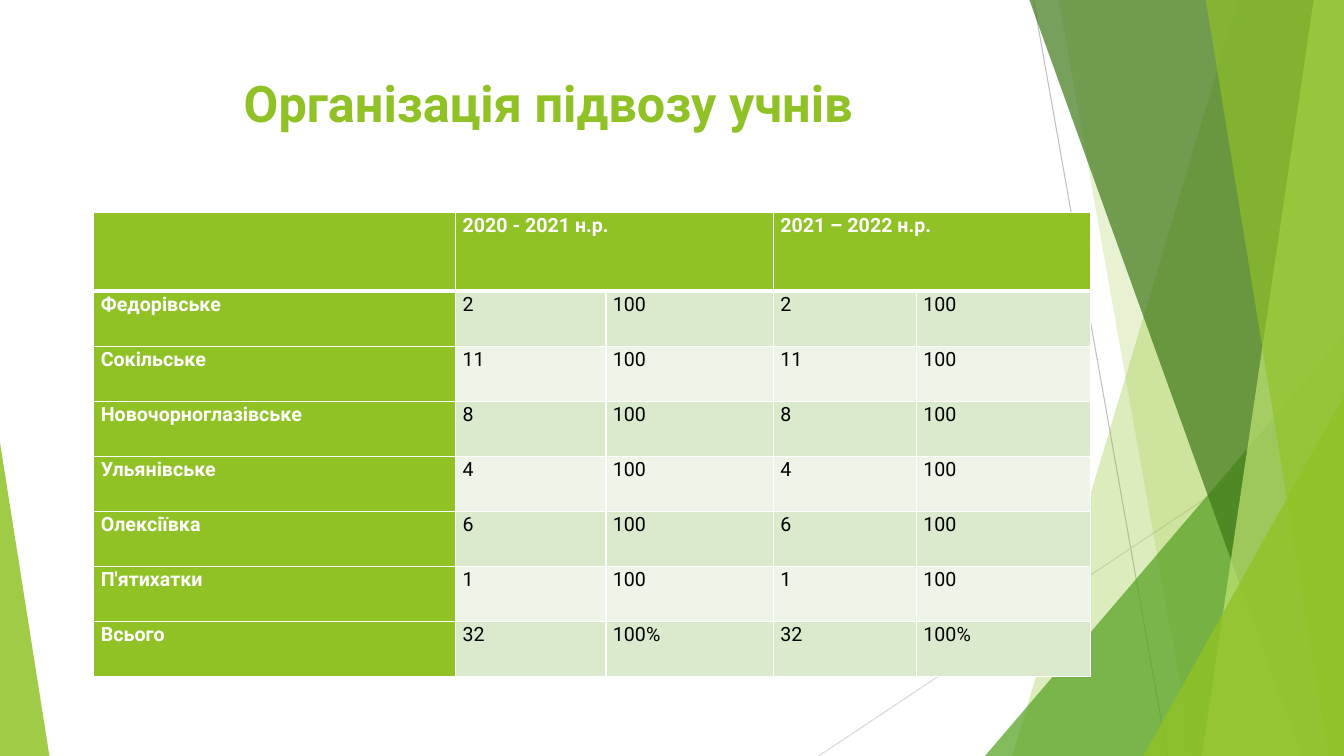
import collections

import lxml.etree
import pptx
import pptx.dml.color
import pptx.enum.shapes
import pptx.enum.text
import pptx.oxml.ns
import pptx.util

COLORS = {
    "lime": "90C226", "green": "54A021", "forest": "3F7819", "pale": "C0E474",
    "gray": "BFBFBF", "silver": "D9D9D9", "white": "FFFFFF", "black": "000000",
    "odd": "DBE9CD", "even": "EEF4E8",
}
FONT = "Roboto"
COLUMNS, ROWS = 13.33, 7.5
Box = collections.namedtuple("Box", "left top width height")
HEADINGS = {1: "2020 - 2021 н.р.", 3: "2021 – 2022 н.р."}
COLUMN_WIDTHS = [3.59, 1.49, 1.66, 1.42, 1.73]
HEADER_HEIGHT = 0.78
SCHOOLS = [
    ("Федорівське", "2", "100"),
    ("Сокільське", "11", "100"),
    ("Новочорноглазівське", "8", "100"),
    ("Ульянівське", "4", "100"),
    ("Олексіївка", "6", "100"),
    ("П'ятихатки", "1", "100"),
    ("Всього", "32", "100%"),
]


def grid(*lengths):
    """Turn grid columns or rows, one inch each, into slide lengths."""
    return [pptx.util.Inches(length) for length in lengths]


def color(name):
    """Return a named colour."""
    return pptx.dml.color.RGBColor.from_string(COLORS[name])


def paint(shape, name, opacity):
    """Fill a shape with a translucent colour, without line or shadow."""
    shape.shadow.inherit = False
    shape.line.fill.background()
    shape.fill.solid()
    shape.fill.fore_color.rgb = color(name)
    tone = shape.fill._xPr.find(".//" + pptx.oxml.ns.qn("a:srgbClr"))
    lxml.etree.SubElement(tone, pptx.oxml.ns.qn("a:alpha"), val=str(opacity * 1000))


def add_ray(page, box, start, end, name):
    """Draw a thin line between two points of the box."""
    points = [box.left + start[0], box.top + start[1], box.left + end[0], box.top + end[1]]
    ray = page.shapes.add_connector(pptx.enum.shapes.MSO_CONNECTOR.STRAIGHT, *grid(*points))
    ray.line.color.rgb = color(name)
    ray.line.width = pptx.util.Pt(0.75)
    lxml.etree.SubElement(ray._element.spPr, pptx.oxml.ns.qn("a:effectLst"))


def add_blade(page, box, top, bottom, name, opacity):
    """Fill the box to the right of a slanted edge."""
    right, floor = box.left + box.width, box.top + box.height
    corners = [(right, box.top), (right, floor), (box.left + bottom, floor)]
    blade = page.shapes.build_freeform(*grid(box.left + top, box.top))
    blade.add_line_segments([grid(*corner) for corner in corners], close=True)
    paint(blade.convert_to_shape(), name, opacity)


def add_wedge(page, box, peak, name, opacity):
    """Fill the box with a triangle whose peak is at a share of its width."""
    wedge = page.shapes.add_shape(
        pptx.enum.shapes.MSO_SHAPE.ISOSCELES_TRIANGLE, *grid(*box))
    wedge.adjustments[0] = peak
    paint(wedge, name, opacity)


def add_corner_wedge(page, box, left, top, name, opacity):
    """Put a triangle in the lower right corner of the box."""
    corner = Box(box.left + left, box.top + top, box.width - left, box.height - top)
    add_wedge(page, corner, 1, name, opacity)


def add_facets(page, box):
    """Draw the layered green facets."""
    add_ray(page, box, (2.13, 0), (3.46, box.height), "gray")
    add_ray(page, box, (box.width, 4.03), (0, box.height), "silver")
    add_blade(page, box, 4.16, 1.92, "lime", 30)
    add_blade(page, box, 2.38, 3.71, "lime", 20)
    add_corner_wedge(page, box, 1.65, 3.33, "green", 72)
    add_blade(page, box, 2.09, 4.79, "forest", 70)
    add_blade(page, box, 4.91, 3.8, "pale", 70)
    add_blade(page, box, 3.84, 5.06, "lime", 65)
    add_corner_wedge(page, box, 3.22, 3.93, "lime", 80)


def style_paragraph(para, size, name, bold):
    """Format the runs of a paragraph."""
    for span in para.runs:
        span.font.name = FONT
        span.font.size = pptx.util.Pt(size)
        span.font.bold = bold
        span.font.color.rgb = color(name)


def add_title(page, box):
    """Write the centred title in its placeholder."""
    title = page.shapes.title
    title.left, title.top, title.width, title.height = grid(*box)
    frame = title.text_frame
    frame.text = "Організація підвозу учнів"
    frame.word_wrap = True
    frame.vertical_anchor = pptx.enum.text.MSO_ANCHOR.TOP
    para = frame.paragraphs[0]
    para.alignment = pptx.enum.text.PP_ALIGN.CENTER
    style_paragraph(para, 36, "lime", True)


def add_borders(cell, bottom):
    """Give a cell white borders, with the bottom one in its own width."""
    properties = cell._tc.get_or_add_tcPr()
    widths = {"a:lnL": 1, "a:lnR": 1, "a:lnT": 1, "a:lnB": bottom}
    for position, (tag, width) in enumerate(widths.items()):
        line = lxml.etree.Element(pptx.oxml.ns.qn(tag), w=str(pptx.util.Pt(width)))
        fill = lxml.etree.SubElement(line, pptx.oxml.ns.qn("a:solidFill"))
        lxml.etree.SubElement(fill, pptx.oxml.ns.qn("a:srgbClr"), val=COLORS["white"])
        properties.insert(position, line)


def fill_cell(cell, text, is_heading, background, bottom):
    """Write and format one table cell."""
    cell.margin_left, cell.margin_right, cell.margin_top, cell.margin_bottom = grid(
        0.07, 0.07, 0, 0)
    cell.fill.solid()
    cell.fill.fore_color.rgb = color(background)
    add_borders(cell, bottom)
    cell.text_frame.text = text
    para = cell.text_frame.paragraphs[0]
    para.line_spacing = 1.07
    style_paragraph(para, 14, "white" if is_heading else "black", is_heading)


def add_transport_table(page, box):
    """Build the table of pupils transported in two school years."""
    rows = [[HEADINGS.get(index, "") for index in range(len(COLUMN_WIDTHS))]]
    rows += [[name, count, share, count, share] for name, count, share in SCHOOLS]
    table = page.shapes.add_table(len(rows), len(COLUMN_WIDTHS), *grid(*box)).table
    for column, width in zip(table.columns, grid(*COLUMN_WIDTHS)):
        column.width = width
    body_height = (box.height - HEADER_HEIGHT) / len(SCHOOLS)
    for row_index, row in enumerate(rows):
        table.rows[row_index].height = pptx.util.Inches(body_height if row_index else HEADER_HEIGHT)
        for column_index, text in enumerate(row):
            is_heading = row_index == 0 or column_index == 0
            band = "odd" if row_index % 2 else "even"
            fill_cell(table.cell(row_index, column_index), text, is_heading,
                      "lime" if is_heading else band, 1 if row_index else 3)
    for column_index in HEADINGS:
        table.cell(0, column_index).merge(table.cell(0, column_index + 1))


def main():
    """Build and save the slide."""
    deck = pptx.Presentation()
    deck.slide_width, deck.slide_height = grid(COLUMNS, ROWS)
    page = deck.slides.add_slide(deck.slide_layouts[5])
    add_facets(page, Box(8.12, 0, COLUMNS - 8.12, ROWS))
    add_wedge(page, Box(0, 4.39, 0.49, ROWS - 4.39), 0, "lime", 85)
    add_title(page, Box(0.74, 0.67, 9.4, 1.44))
    add_transport_table(page, Box(0.93, 2.11, sum(COLUMN_WIDTHS), 4.6))
    deck.save("out.pptx")


if __name__ == "__main__":
    main()
